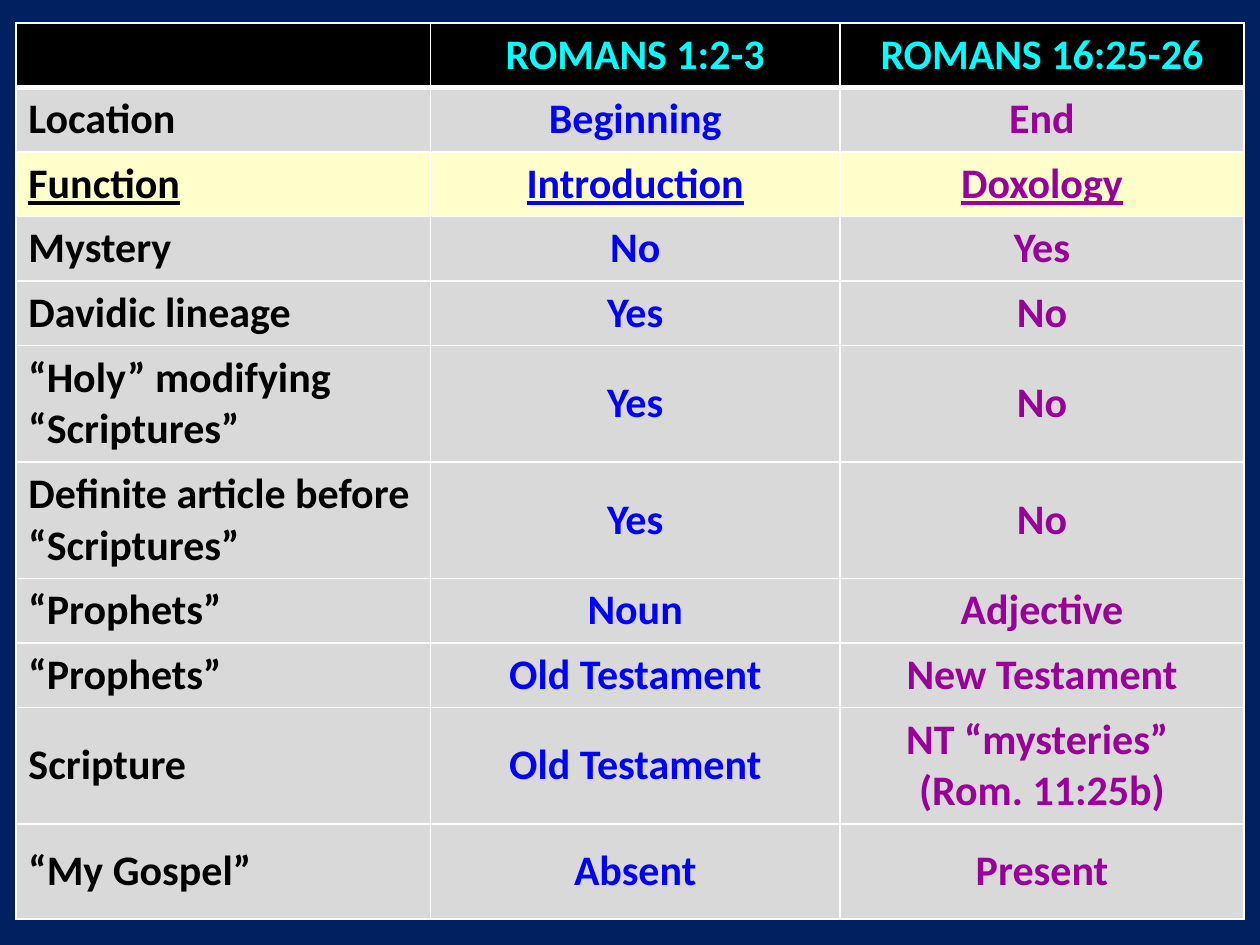
from dataclasses import dataclass

import pptx
import pptx.dml.color
import pptx.enum.text
import pptx.oxml
import pptx.oxml.ns
import pptx.util

Cm = pptx.util.Cm
Pt = pptx.util.Pt
ANCHOR = pptx.enum.text.MSO_ANCHOR
ALIGN = pptx.enum.text.PP_ALIGN


def rgb(value):
    return pptx.dml.color.RGBColor.from_string(value)


@dataclass(frozen=True)
class Theme:
    background: str = "002060"
    header_fill: str = "000000"
    header_text: str = "00FFFF"
    row_fill: str = "D9D9D9"
    highlight_fill: str = "FFFFCC"
    column_text: tuple = ("000000", "0000FF", "990099")
    border: str = "FFFFFF"
    border_width: float = 1
    header_rule_width: float = 3
    font: str = "Calibri"
    size: float = 24


class SlideBuilder:
    def __init__(self, presentation, theme):
        self.theme = theme
        self.slide = presentation.slides.add_slide(presentation.slide_layouts[6])
        fill = self.slide.background.fill
        fill.solid()
        fill.fore_color.rgb = rgb(theme.background)

    def add_border(self, cell, side, width):
        """Draw one side of a cell: L, R, T or B, in that order and before the fill."""
        cell._tc.get_or_add_tcPr().append(pptx.oxml.parse_xml(
            f'<a:ln{side} {pptx.oxml.ns.nsdecls("a")} w="{Pt(width)}">'
            f'<a:solidFill><a:srgbClr val="{self.theme.border}"/></a:solidFill>'
            f'</a:ln{side}>'))

    def style_cell(self, cell, text, row, column, highlighted):
        theme = self.theme
        is_header = row == 0
        for side in "LRTB":
            under_header = (row, side) in ((0, "B"), (1, "T"))
            self.add_border(cell, side, theme.header_rule_width if under_header
                            else theme.border_width)
        cell.fill.solid()
        cell.fill.fore_color.rgb = rgb(
            theme.header_fill if is_header
            else theme.highlight_fill if highlighted else theme.row_fill)
        cell.vertical_anchor = ANCHOR.TOP if is_header else ANCHOR.MIDDLE
        cell.text = text
        for paragraph in cell.text_frame.paragraphs:
            paragraph.alignment = ALIGN.CENTER if column else ALIGN.LEFT
            font = paragraph.font
            font.name, font.size, font.bold = theme.font, Pt(theme.size), True
            font.underline = highlighted
            font.color.rgb = rgb(theme.header_text if is_header
                                 else theme.column_text[column])

    def add_table(self, left, top, widths, heights, rows, highlighted_row):
        table = self.slide.shapes.add_table(
            len(rows), len(widths), Cm(left), Cm(top),
            Cm(sum(widths)), Cm(sum(heights))).table
        table.horz_banding = False
        for column, width in zip(table.columns, widths):
            column.width = Cm(width)
        for row, height in zip(table.rows, heights):
            row.height = Cm(height)
        for row, texts in enumerate(rows):
            for column, text in enumerate(texts):
                self.style_cell(table.cell(row, column), text, row, column,
                                row == highlighted_row)


COMPARISON = [
    ("", "ROMANS 1:2-3", "ROMANS 16:25-26"),
    ("Location", "Beginning", "End"),
    ("Function", "Introduction", "Doxology"),
    ("Mystery", "No", "Yes"),
    ("Davidic lineage", "Yes", "No"),
    ("“Holy” modifying “Scriptures”", "Yes", "No"),
    ("Definite article before “Scriptures”", "Yes", "No"),
    ("“Prophets”", "Noun", "Adjective"),
    ("“Prophets”", "Old Testament", "New Testament"),
    ("Scripture", "Old Testament", "NT “mysteries” \n(Rom. 11:25b)"),
    ("“My Gospel”", "Absent", "Present"),
]
ONE_LINE, TWO_LINES, LAST = 1.3, 2.35, 1.92
ROW_HEIGHTS = [ONE_LINE] * 5 + [TWO_LINES] * 2 + [ONE_LINE] * 2 + [TWO_LINES, LAST]


def main():
    presentation = pptx.Presentation()
    presentation.slide_width, presentation.slide_height = Cm(25.4), Cm(19.05)
    builder = SlideBuilder(presentation, Theme())
    builder.add_table(0.32, 0.46, [8.36, 8.25, 8.15], ROW_HEIGHTS,
                      COMPARISON, highlighted_row=2)
    presentation.save("out.pptx")


if __name__ == "__main__":
    main()
